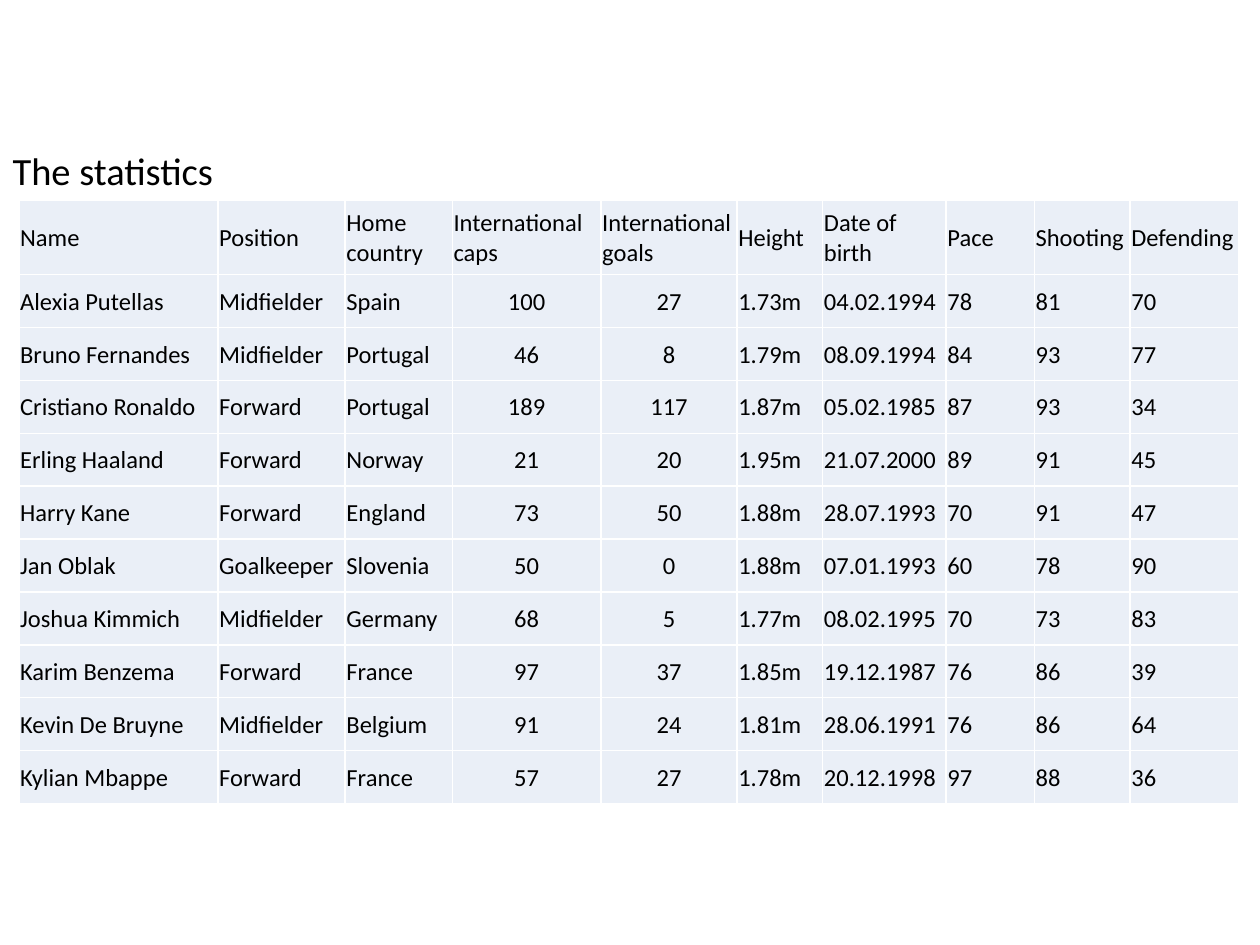
import pptx
import pptx.util
import pptx.dml.color
import pptx.enum.text
from lxml import etree

Inches = pptx.util.Inches
Pt = pptx.util.Pt
RGBColor = pptx.dml.color.RGBColor
Align = pptx.enum.text.PP_ALIGN
Anchor = pptx.enum.text.MSO_ANCHOR
Fit = pptx.enum.text.MSO_AUTO_SIZE

BLACK = RGBColor(0x00, 0x00, 0x00)
WHITE = RGBColor(0xFF, 0xFF, 0xFF)
PALE = RGBColor(0xEA, 0xEF, 0xF7)
FONT = "Calibri"
NS = "http://schemas.openxmlformats.org/drawingml/2006/main"

WIDTHS = [1.58, 1.01, 0.85, 1.18, 1.08, 0.68, 0.98, 0.7, 0.76, 0.86]
HEAD_H, ROW_H = 0.59, 0.42
CENTRED = (3, 4)  # caps and goals

HEADS = ["Name", "Position", "Home country", "International caps",
         "International goals", "Height", "Date of birth", "Pace",
         "Shooting", "Defending"]
PLAYERS = [
    ["Alexia Putellas", "Midfielder", "Spain", 100, 27, "1.73m", "04.02.1994", 78, 81, 70],
    ["Bruno Fernandes", "Midfielder", "Portugal", 46, 8, "1.79m", "08.09.1994", 84, 93, 77],
    ["Cristiano Ronaldo", "Forward", "Portugal", 189, 117, "1.87m", "05.02.1985", 87, 93, 34],
    ["Erling Haaland", "Forward", "Norway", 21, 20, "1.95m", "21.07.2000", 89, 91, 45],
    ["Harry Kane", "Forward", "England", 73, 50, "1.88m", "28.07.1993", 70, 91, 47],
    ["Jan Oblak", "Goalkeeper", "Slovenia", 50, 0, "1.88m", "07.01.1993", 60, 78, 90],
    ["Joshua Kimmich", "Midfielder", "Germany", 68, 5, "1.77m", "08.02.1995", 70, 73, 83],
    ["Karim Benzema", "Forward", "France", 97, 37, "1.85m", "19.12.1987", 76, 86, 39],
    ["Kevin De Bruyne", "Midfielder", "Belgium", 91, 24, "1.81m", "28.06.1991", 76, 86, 64],
    ["Kylian Mbappe", "Forward", "France", 57, 27, "1.78m", "20.12.1998", 97, 88, 36],
]


def style(para, size, align=Align.LEFT):
    para.alignment = align
    para.font.name = FONT
    para.font.size = Pt(size)
    para.font.color.rgb = BLACK


def add_title(slide, text):
    title = slide.shapes.title
    title.left, title.top = Inches(0), Inches(1.12)
    title.width, title.height = Inches(3.36), Inches(0.47)
    frame = title.text_frame
    frame.text = text
    frame.word_wrap = True
    frame.auto_size = Fit.SHAPE_TO_FIT_TEXT
    frame.vertical_anchor = Anchor.TOP
    style(frame.paragraphs[0], 22)


def add_edges(cell):
    props = cell._tc.get_or_add_tcPr()
    for side in ("lnL", "lnR", "lnT", "lnB"):
        line = etree.SubElement(props, f"{{{NS}}}{side}", w=str(Pt(1)))
        fill = etree.SubElement(line, f"{{{NS}}}solidFill")
        etree.SubElement(fill, f"{{{NS}}}srgbClr", val=str(WHITE))


def fill_cell(cell, text, align):
    # Borders must come before the fill in the cell properties
    add_edges(cell)
    cell.fill.solid()
    cell.fill.fore_color.rgb = PALE
    cell.margin_left = cell.margin_top = cell.margin_right = Inches(0.01)
    cell.margin_bottom = 0
    cell.vertical_anchor = Anchor.MIDDLE
    cell.text = str(text)
    style(cell.text_frame.paragraphs[0], 14, align)


def add_stats(slide, rows):
    height = HEAD_H + ROW_H * (len(rows) - 1)
    table = slide.shapes.add_table(
        len(rows), len(WIDTHS), Inches(0.15), Inches(1.59),
        Inches(sum(WIDTHS)), Inches(height)).table
    for col, width in zip(table.columns, WIDTHS):
        col.width = Inches(width)
    table.first_row = table.horz_banding = False
    for r, row in enumerate(rows):
        table.rows[r].height = Inches(ROW_H if r else HEAD_H)
        for c, text in enumerate(row):
            mid = r > 0 and c in CENTRED
            fill_cell(table.cell(r, c), text, Align.CENTER if mid else Align.LEFT)


def main():
    deck = pptx.Presentation()
    deck.slide_width, deck.slide_height = Inches(10), Inches(7.5)
    slide = deck.slides.add_slide(deck.slide_layouts[5])  # title only
    add_title(slide, "The statistics")
    add_stats(slide, [HEADS] + PLAYERS)
    deck.save("out.pptx")


if __name__ == "__main__":
    main()
